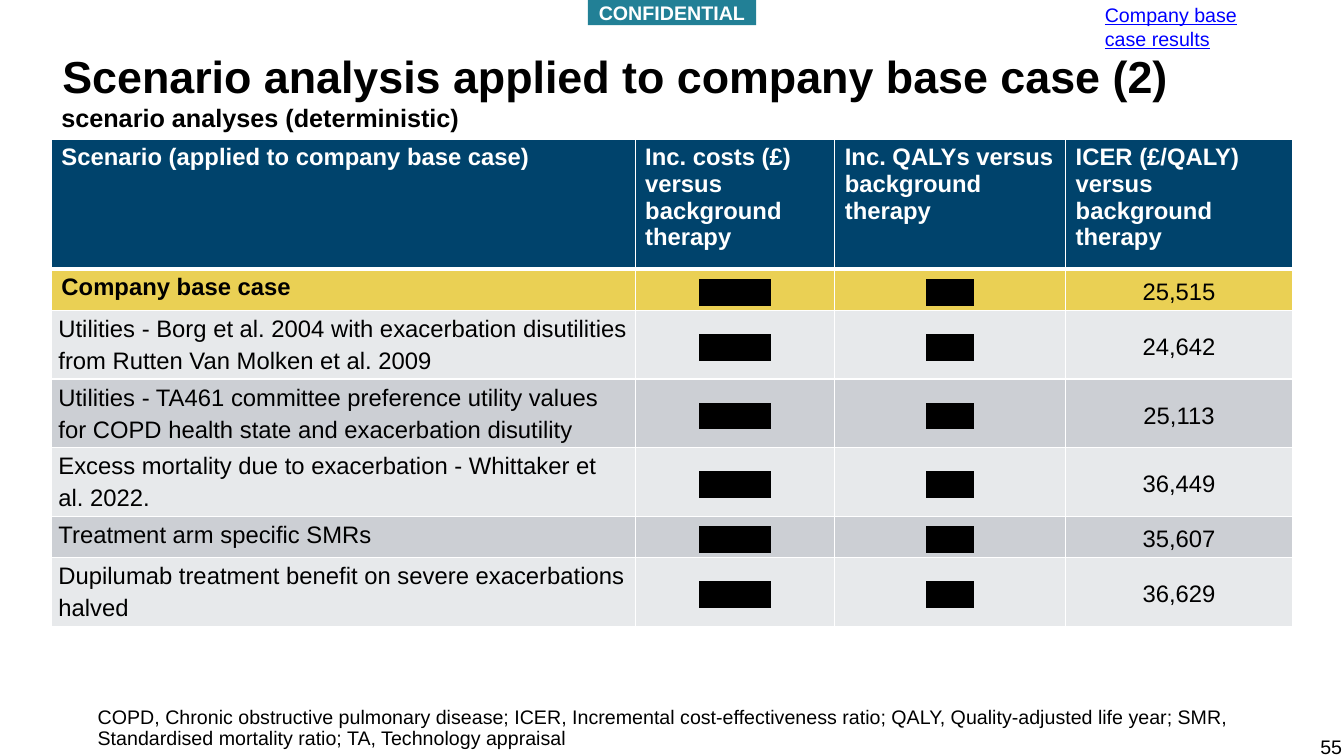
import pptx
import pptx.util
import pptx.dml.color
import pptx.enum.shapes
import pptx.enum.text
import pptx.oxml
import pptx.oxml.ns

Inches = pptx.util.Inches
Pt = pptx.util.Pt
Color = pptx.dml.color.RGBColor
Align = pptx.enum.text.PP_ALIGN
Anchor = pptx.enum.text.MSO_ANCHOR

BLACK = Color(0x00, 0x00, 0x00)
WHITE = Color(0xFF, 0xFF, 0xFF)
TEAL = Color(0x22, 0x80, 0x96)
NAVY = Color(0x00, 0x43, 0x6C)
GOLD = Color(0xEA, 0xD0, 0x54)
LIGHT = Color(0xE7, 0xE9, 0xEB)
GREY = Color(0xCC, 0xCF, 0xD4)
BLUE = Color(0x00, 0x00, 0xFF)

HEADS = ["Scenario (applied to company base case)",
         "Inc. costs (£) versus background therapy",
         "Inc. QALYs versus background therapy",
         "ICER (£/QALY) versus background therapy"]
CASES = [
    ("Company base case", "25,515", 0.41),
    ("Utilities - Borg et al. 2004 with exacerbation disutilities "
     "from Rutten Van Molken et al. 2009", "24,642", 0.68),
    ("Utilities - TA461 committee preference utility values for COPD "
     "health state and exacerbation disutility", "25,113", 0.68),
    ("Excess mortality due to exacerbation - Whittaker et al. 2022.",
     "36,449", 0.68),
    ("Treatment arm specific SMRs", "35,607", 0.41),
    ("Dupilumab treatment benefit on severe exacerbations halved",
     "36,629", 0.68),
]
WIDTHS = [5.79, 1.98, 2.29, 2.25]
HEAD_HIGH = 1.29


class Deck:
    """Holds the text style and the current slide."""

    def __init__(self):
        self.show = pptx.Presentation()
        self.show.slide_width = Inches(13.33)
        self.show.slide_height = Inches(7.5)
        self.slide = self.show.slides.add_slide(self.show.slide_layouts[6])
        self.face = "Arial"

    def style(self, frame, text, size, color=BLACK, bold=False, line=False,
              align=Align.LEFT, pitch=None):
        frame.text = text
        para = frame.paragraphs[0]
        para.alignment = align
        if pitch:
            para.line_spacing = pitch
        font = para.runs[0].font
        font.name, font.size, font.bold = self.face, Pt(size), bold
        font.color.rgb = color
        if line:
            font.underline = True
        return para

    def label(self, box, text, size, wrap=True, **look):
        shape = self.slide.shapes.add_textbox(*map(Inches, box))
        shape.text_frame.word_wrap = wrap
        self.style(shape.text_frame, text, size, **look)

    def banner(self, box, text):
        shape = self.slide.shapes.add_shape(
            pptx.enum.shapes.MSO_SHAPE.RECTANGLE, *map(Inches, box))
        shape.shadow.inherit = False
        shape.fill.solid()
        shape.fill.fore_color.rgb = TEAL
        shape.line.fill.background()
        shape.text_frame.vertical_anchor = Anchor.MIDDLE
        self.style(shape.text_frame, text, 14, WHITE, True,
                   align=Align.CENTER)

    def mark(self, para):
        mark = pptx.oxml.parse_xml(
            f'<a:highlight {pptx.oxml.ns.nsdecls("a")}>'
            f'<a:srgbClr val="{BLACK}"/></a:highlight>')
        para.runs[0].font._element.find(
            pptx.oxml.ns.qn("a:latin")).addprevious(mark)

    def paint(self, cell, row, fill):
        props = cell._tc.get_or_add_tcPr()
        for side in "LRTB":
            thick = (row, side) in ((0, "B"), (1, "T"))
            props.append(pptx.oxml.parse_xml(
                f'<a:ln{side} {pptx.oxml.ns.nsdecls("a")} '
                f'w="{Pt(3 if thick else 1)}"><a:solidFill>'
                f'<a:srgbClr val="{WHITE}"/></a:solidFill></a:ln{side}>'))
        cell.fill.solid()
        cell.fill.fore_color.rgb = fill

    def cell(self, cell, row, col, text):
        fill = (NAVY, GOLD)[row] if row < 2 else (LIGHT, GREY)[row % 2]
        self.paint(cell, row, fill)
        if row == 0 or (row == 1 and col == 0):
            self.style(cell.text_frame, text, 17, BLACK if row else WHITE,
                       True)
            return
        cell.margin_left = cell.margin_right = Inches(0.07)
        cell.margin_top = cell.margin_bottom = 0
        if col:
            cell.vertical_anchor = Anchor.MIDDLE
        hidden = col in (1, 2)
        para = self.style(cell.text_frame, text, 17, line=hidden, pitch=1.2,
                          align=Align.CENTER if col else Align.LEFT)
        para.space_after = Pt(2)
        if hidden:
            self.mark(para)

    def table(self, left, top, rows, widths, highs):
        grid = self.slide.shapes.add_table(
            len(rows), len(widths), Inches(left), Inches(top),
            Inches(sum(widths)), Inches(sum(highs))).table
        for col, width in zip(grid.columns, widths):
            col.width = Inches(width)
        for num, (row, high) in enumerate(zip(rows, highs)):
            grid.rows[num].height = Inches(high)
            for col, text in enumerate(row):
                self.cell(grid.cell(num, col), num, col, text)


def main():
    deck = Deck()
    deck.label((12.9, 7.24, 0.51, 0.4), "55", 14, align=Align.RIGHT)
    deck.label((0.52, 0.49, 12.3, 0.65),
               "Scenario analysis applied to company base case (2)", 32,
               bold=True, pitch=0.9)
    deck.banner((5.83, 0, 1.67, 0.25), "CONFIDENTIAL")
    deck.label((0.51, 0.97, 4.18, 0.4), "scenario analyses (deterministic)",
               18, wrap=False, bold=True)
    rows = [HEADS] + [[name, "xxxxxx", "xxxx", icer]
                      for name, icer, high in CASES]
    highs = [HEAD_HIGH] + [high for name, icer, high in CASES]
    deck.table(0.51, 1.38, rows, WIDTHS, highs)
    deck.label((0.87, 6.97, 12.05, 0.49),
               "COPD, Chronic obstructive pulmonary disease; ICER, "
               "Incremental cost-effectiveness ratio; QALY, Quality-adjusted "
               "life year; SMR, Standardised mortality ratio; TA, Technology "
               "appraisal", 14, pitch=0.9)
    deck.label((10.86, -0.02, 1.97, 0.57), "Company base case results", 14,
               color=BLUE, line=True)
    deck.show.save("out.pptx")


if __name__ == "__main__":
    main()
